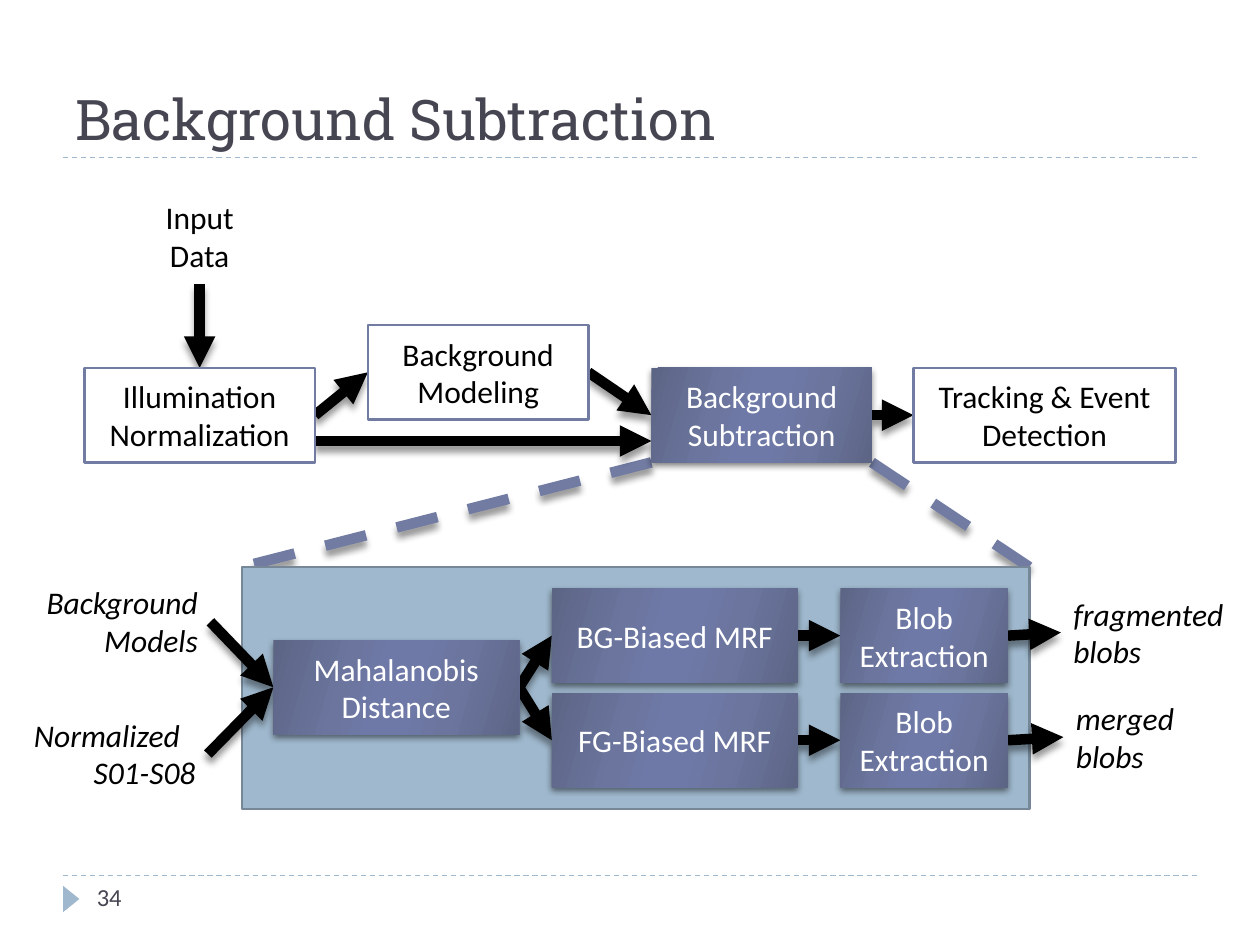
from lxml import etree
from pptx import Presentation
from pptx.dml.color import RGBColor
from pptx.enum import dml, shapes, text
from pptx.oxml.ns import qn
from pptx.util import Inches, Pt

BLACK, WHITE, DARK = "000000", "FFFFFF", "464653"
PURPLE, BLUE, BLUE_EDGE = "727CA3", "9FB8CD", "768898"
GRADIENT = [(0, "5D6585"), (30, "6B759E"), (45, "6E79A7"),
            (55, "6E79A7"), (73, "6B759E"), (100, "5D6585")]
LEFT, CENTER, RIGHT = text.PP_ALIGN.LEFT, text.PP_ALIGN.CENTER, text.PP_ALIGN.RIGHT
TOP, MIDDLE, BOTTOM = text.MSO_ANCHOR.TOP, text.MSO_ANCHOR.MIDDLE, text.MSO_ANCHOR.BOTTOM
BOX_HEIGHT = 0.75


def color(value):
    return RGBColor.from_string(value)


def add_child(parent, tag, **attributes):
    return etree.SubElement(parent, qn(tag), {k: str(v) for k, v in attributes.items()})


def add_shadow(shape, distance, opacity):
    effects = shape._element.spPr.find(qn("a:effectLst"))
    if effects is None:
        effects = add_child(shape._element.spPr, "a:effectLst")
    shadow = add_child(effects, "a:outerShdw", blurRad=Pt(4), dist=Pt(distance),
                       dir=90 * 60000, rotWithShape=0)
    add_child(add_child(shadow, "a:srgbClr", val=BLACK), "a:alpha", val=opacity * 1000)


def write(shape, words, size=18, font="Calibri", ink=BLACK, italic=False,
          aligns=(CENTER,), anchor=MIDDLE):
    """Write one paragraph per line; the last alignment serves any further lines."""
    frame = shape.text_frame
    frame.word_wrap = True
    frame.vertical_anchor = anchor
    for i, line in enumerate(words.split("\n")):
        para = frame.add_paragraph() if i else frame.paragraphs[0]
        para.alignment = aligns[min(i, len(aligns) - 1)]
        span = para.add_run()
        span.text = line
        span.font.size, span.font.name, span.font.italic = Pt(size), font, italic
        span.font.color.rgb = color(ink)


def add_text(page, box, words, **style):
    label = page.shapes.add_textbox(*map(Inches, box))
    write(label, words, **style)
    return label


def add_box(page, box, fill, edge=None, kind=shapes.MSO_SHAPE.RECTANGLE):
    shape = page.shapes.add_shape(kind, *map(Inches, box))
    shape.shadow.inherit = False
    shape.fill.solid()
    shape.fill.fore_color.rgb = color(fill)
    if edge:
        shape.line.color.rgb = color(edge)
        shape.line.width = Pt(1.5)
    else:
        shape.line.fill.background()
    return shape


def add_outline_box(page, box, words):
    shape = add_box(page, box, WHITE, PURPLE)
    write(shape, words)
    return shape


def add_gradient_box(page, box, words):
    shape = add_box(page, box, PURPLE)
    shape.fill.gradient()
    gradient = shape._element.spPr.find(qn("a:gradFill"))
    stops = gradient.find(qn("a:gsLst"))
    for stop in list(stops):
        stops.remove(stop)
    for position, tint in GRADIENT:
        stop = add_child(stops, "a:gs", pos=position * 1000)
        add_child(stop, "a:srgbClr", val=tint)
    gradient.find(qn("a:lin")).set("ang", str(16 * 60000))
    add_shadow(shape, 2, 50)
    write(shape, words, ink=WHITE)
    return shape


def add_line(page, start, end, ink, width, dashed=False):
    line = page.shapes.add_connector(shapes.MSO_CONNECTOR.STRAIGHT,
                                     *map(Inches, (*start, *end)))
    line.line.color.rgb = color(ink)
    line.line.width = Pt(width)
    if dashed:
        line.line.dash_style = dml.MSO_LINE.DASH
    add_child(line._element.spPr, "a:effectLst")
    return line


def add_arrow(page, panel, start, end):
    """Each end is an (x, y) point in inches or a (shape, side) pair."""
    joined = [not isinstance(spot[0], (int, float)) for spot in (start, end)]
    points = [(0, 0) if join else spot for join, spot in zip(joined, (start, end))]
    arrow = add_line(page, *points, BLACK, 6)
    if joined[0]:
        arrow.begin_connect(*start)
    if joined[1]:
        arrow.end_connect(*end)
    add_child(arrow.line._get_or_add_ln(), "a:tailEnd", type="triangle")
    add_shadow(arrow, 3.4, 40)
    panel._element.addnext(arrow._element)  # above the panel, below the boxes


def add_frame(page, box):
    """Title, rules and page number."""
    left, top, width, height = box
    for y in (top + 1.08, top + height):
        add_line(page, (left, y), (left + width, y), BLUE, 0.75, dashed=True)
    marker = add_box(page, (left - 0.04, top + height + 0.12, 0.21, 0.13), BLUE,
                     kind=shapes.MSO_SHAPE.ISOSCELES_TRIANGLE)
    marker.rotation = 90
    add_text(page, (left, top, width, 1.08), "Background Subtraction", size=32,
             font="Roboto Slab", ink=DARK, aligns=(LEFT,), anchor=BOTTOM)
    add_text(page, (left + 0.17, top + height, 2.17, 0.4), "34", size=14,
             ink=DARK, aligns=(LEFT,), anchor=TOP)


def add_panel(page, box, source):
    """Detail panel, with dashed lines fanning out from the source box."""
    left, top, width, _ = box
    x, y, source_width, source_height = source
    for start_x, end_x in ((x, left), (x + source_width, left + width)):
        ray = add_line(page, (start_x, y + source_height), (end_x, top), PURPLE, 6, dashed=True)
        add_shadow(ray, 3.4, 40)
    return add_box(page, box, BLUE, BLUE_EDGE)


def add_pipeline(page, panel, box):
    """Upper row: input to tracking."""
    left, top, _, _ = box
    row = top + 1.42
    source = add_text(page, (left + 0.33, top, 1.17, BOX_HEIGHT), "Input Data")
    normal = add_outline_box(page, (left, row, 1.83, BOX_HEIGHT), "Illumination\nNormalization")
    model = add_outline_box(page, (left + 2.25, row - 0.34, 1.75, BOX_HEIGHT),
                            "Background\nModeling")
    subtract = add_gradient_box(page, (left + 4.5, row, 1.75, BOX_HEIGHT),
                                "Background Subtraction")
    track = add_outline_box(page, (left + 6.58, row, 2.08, BOX_HEIGHT),
                            "Tracking & Event Detection")
    bypass = row + 0.58
    for start, end in (((source, 2), (normal, 0)), ((normal, 3), (model, 1)),
                       ((model, 3), (subtract, 1)), ((subtract, 3), (track, 1)),
                       ((left + 1.83, bypass), (left + 4.5, bypass))):
        add_arrow(page, panel, start, end)


def add_detail(page, panel, box):
    """Lower part: steps inside the panel, inputs and outputs beside it."""
    left, top, width, _ = box
    distance = add_gradient_box(page, (left + 0.25, top + 0.58, 1.95, BOX_HEIGHT),
                                "Mahalanobis Distance")
    branches = (("BG-Biased MRF", "fragmented blobs", 0.25, 1.67),
                ("FG-Biased MRF", "merged blobs", 0.27, 1.15))
    for i, (name, result, gap, result_width) in enumerate(branches):
        row = top + 0.17 + i * 0.83
        field = add_gradient_box(page, (left + 2.46, row, 1.95, BOX_HEIGHT), name)
        blob = add_gradient_box(page, (left + 4.75, row, 1.33, BOX_HEIGHT), "Blob Extraction")
        x = left + width + gap
        add_text(page, (x, row, result_width, 0.71), result, italic=True,
                 aligns=(LEFT,), anchor=TOP)
        add_arrow(page, panel, (distance, 3), (field, 1))
        add_arrow(page, panel, (field, 3), (blob, 1))
        add_arrow(page, panel, (blob, 3), (x, row + 0.35))

    inputs = (("Background Models", (left - 1.92, top + 0.08, 1.67, 0.71), (RIGHT,)),
              ("Normalized\nS01-S08", (left - 1.75, top + 1.13, 1.48, 0.71), (LEFT, RIGHT)))
    for words, place, aligns in inputs:
        label = add_text(page, place, words, italic=True, aligns=aligns, anchor=TOP)
        add_arrow(page, panel, (label, 3), (distance, 1))


def main():
    deck = Presentation()
    deck.slide_width, deck.slide_height = Inches(10), Inches(7.5)
    page = deck.slides.add_slide(deck.slide_layouts[6])
    detail = (1.92, 4.5, 6.25, 1.92)
    add_frame(page, (0.5, 0.17, 9, 6.78))
    panel = add_panel(page, detail, source=(5.17, 2.92, 1.75, BOX_HEIGHT))
    add_pipeline(page, panel, (0.67, 1.5, 8.66, 2.17))
    add_detail(page, panel, detail)
    deck.save("out.pptx")


if __name__ == "__main__":
    main()
